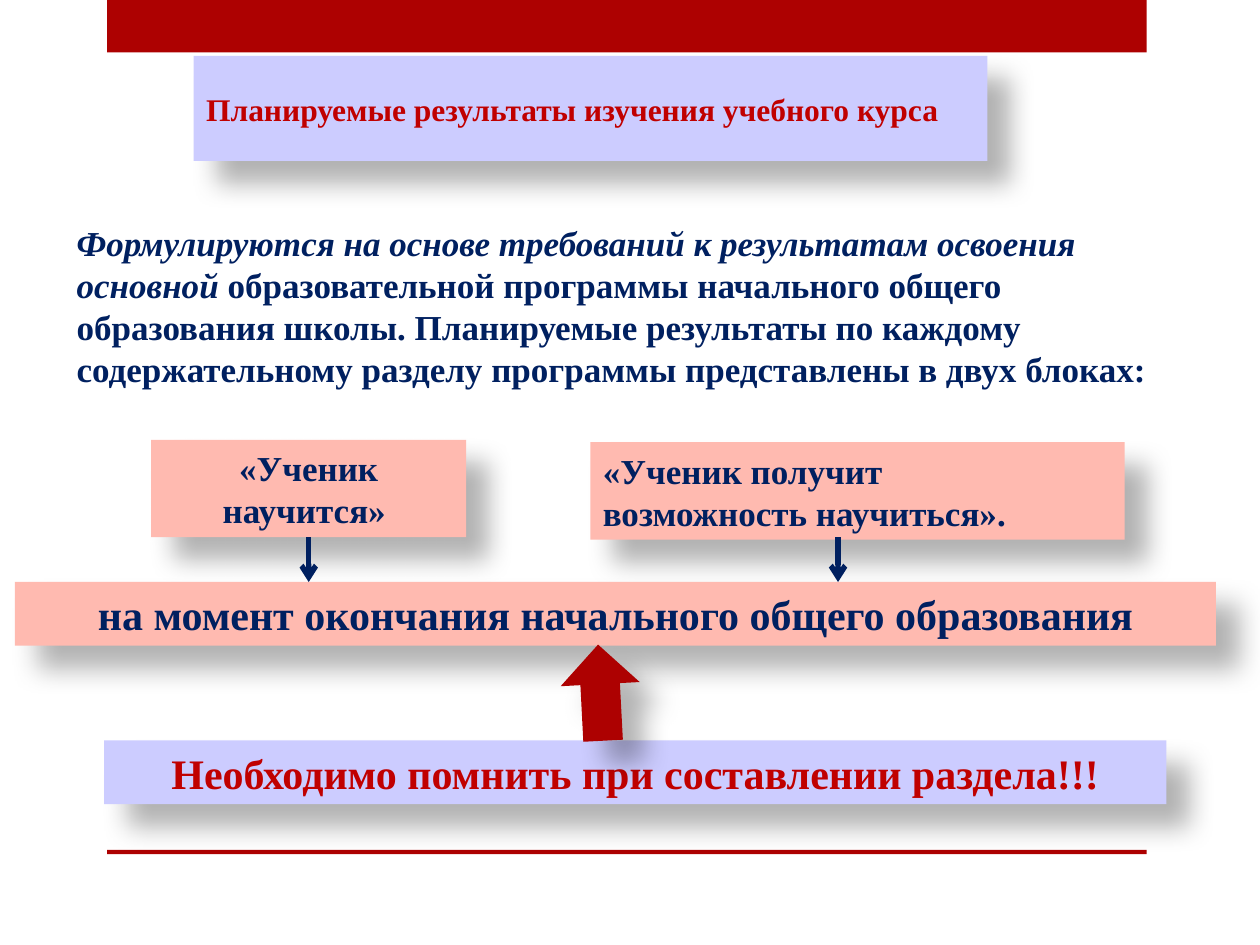
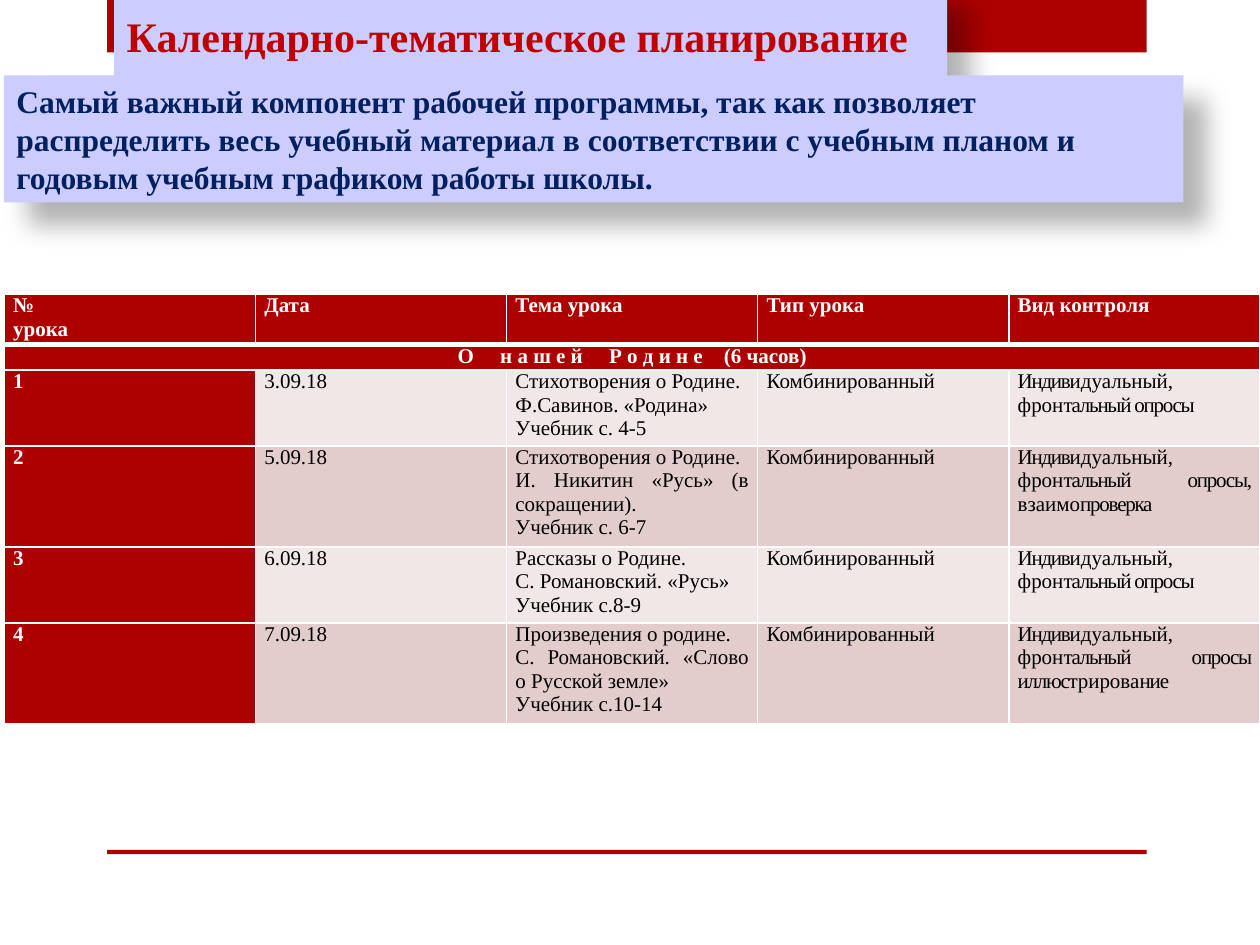
from lxml.etree import SubElement
from pptx import Presentation
from pptx.dml.color import RGBColor
from pptx.enum.shapes import MSO_CONNECTOR, MSO_SHAPE
from pptx.enum.text import MSO_AUTO_SIZE, MSO_VERTICAL_ANCHOR, PP_ALIGN
from pptx.oxml import parse_xml
from pptx.oxml.ns import nsdecls, qn
from pptx.util import Pt

RED = RGBColor(0xAD, 0x01, 0x01)
TITLE_RED = RGBColor(0xC0, 0x00, 0x00)
NAVY = RGBColor(0x00, 0x20, 0x60)
LAVENDER = RGBColor(0xCC, 0xCC, 0xFF)
SALMON = RGBColor(0xFF, 0xBA, 0xB0)
LIGHT_ROW = RGBColor(0xF1, 0xE7, 0xE7)
DARK_ROW = RGBColor(0xE3, 0xCC, 0xCC)
WHITE = RGBColor(0xFF, 0xFF, 0xFF)
BLACK = RGBColor(0x00, 0x00, 0x00)
FONT = "Times New Roman"

BAND_LEFT, BAND_WIDTH = 61.2, 594
COLUMN_WIDTH = 143.5
ROW_HEIGHTS = [28.4, 14.6, 43.4, 57.4, 43.4, 57.4]
TIGHT = -0.7


def plain(*lines):
    """Paragraphs of one segment each, with normal letter spacing."""
    return [[(line, 0)] for line in lines]


def control(*ending):
    """The kind of lesson control, set partly in tight letters."""
    return [[("Индиви", TIGHT), ("дуальный, фрон", 0), *ending]]


HEADERS = [plain("№", "урока"), plain("Дата"), plain("Тема урока"),
           plain("Тип урока"), plain("Вид контроля")]
SECTION = [[("О", 0), (" ", 12), ("н а ш е й", 0), (" ", 12), ("Р о д и н е", 0),
            (" ", 9), ("(6 часов)", 0)]]
LESSONS = [
    ("3.09.18", plain("Стихотворения о Родине.", "Ф.Савинов. «Родина»", "Учебник с. 4-5"),
     control(("тальный опросы", TIGHT))),
    ("5.09.18", plain("Стихотворения о Родине.", "И. Никитин «Русь» (в сокращении).",
                      "Учебник с. 6-7"),
     control(("тальный опросы, ", TIGHT), ("взаимо", 0), ("проверка", TIGHT))),
    ("6.09.18", plain("Рассказы о Родине.", "С. Романовский. «Русь»", "Учебник с.8-9"),
     control(("тальный опросы", TIGHT))),
    ("7.09.18", plain("Произведения о родине.", "С. Романовский. «Слово о Русской земле»",
                      "Учебник с.10-14"),
     control(("тальный опросы иллюст", TIGHT), ("рирова", 0), ("ние", -0.6))),
]


def points(*lengths):
    return [Pt(length) for length in lengths]


def fill_plain(shape, color):
    shape.fill.solid()
    shape.fill.fore_color.rgb = color
    shape.line.fill.background()
    shape.shadow.inherit = False


def add_shadow(shape):
    effects = shape.element.spPr.find(qn("a:effectLst"))
    effects.append(parse_xml(
        f'<a:outerShdw {nsdecls("a")} blurRad="{Pt(15)}" dist="{Pt(18)}" dir="2700000" '
        'algn="tl" rotWithShape="0"><a:srgbClr val="000000"><a:alpha val="30000"/>'
        '</a:srgbClr></a:outerShdw>'))


def format_run(run, size, color, bold=True):
    run.font.name = FONT
    run.font.size = Pt(size)
    run.font.bold = bold
    run.font.color.rgb = color


def write_text(shape, text, size, color, align=PP_ALIGN.LEFT):
    frame = shape.text_frame
    frame.text = text
    frame.word_wrap = True
    frame.auto_size = MSO_AUTO_SIZE.SHAPE_TO_FIT_TEXT
    frame.vertical_anchor = MSO_VERTICAL_ANCHOR.MIDDLE
    for paragraph in frame.paragraphs:
        paragraph.alignment = align
        for run in paragraph.runs:
            format_run(run, size, color)


def add_bands_to_master(presentation, slide):
    """Draw the top band and bottom rule, then move them behind the master's parts."""
    master_tree = presentation.slide_master.shapes.element
    for position, (top, height) in enumerate([(0, 30), (485.7, 2.5)]):
        band = slide.shapes.add_shape(
            MSO_SHAPE.RECTANGLE, *points(BAND_LEFT, top, BAND_WIDTH, height))
        fill_plain(band, RED)
        master_tree.insert(2 + position, band.element)


def place_title(slide, text, box, size):
    title = slide.shapes.title
    title.left, title.top, title.width, title.height = points(*box)
    fill_plain(title, LAVENDER)
    add_shadow(title)
    write_text(title, text, size, TITLE_RED)


def add_panel(slide, text, box, fill, size, color=NAVY, align=PP_ALIGN.CENTER):
    panel = slide.shapes.add_shape(MSO_SHAPE.RECTANGLE, *points(*box))
    fill_plain(panel, fill)
    add_shadow(panel)
    write_text(panel, text, size, color, align)
    return panel


def add_introduction(slide, box):
    text_box = slide.shapes.add_textbox(*points(*box))
    write_text(text_box, "Формулируются на основе требований к результатам освоения основной ",
               20, NAVY)
    paragraph = text_box.text_frame.paragraphs[0]
    paragraph.runs[0].font.italic = True
    run = paragraph.add_run()
    run.text = ("образовательной программы начального общего образования школы. "
                "Планируемые результаты по каждому содержательному разделу программы "
                "представлены в двух блоках:")
    format_run(run, 20, NAVY)


def add_down_arrow(slide, x, top, bottom):
    arrow = slide.shapes.add_connector(MSO_CONNECTOR.STRAIGHT, *points(x, top, x, bottom))
    arrow.line.color.rgb = NAVY
    arrow.line.width = Pt(3)
    properties = arrow.element.spPr
    SubElement(properties.find(qn("a:ln")), qn("a:tailEnd"), type="arrow")
    SubElement(properties, qn("a:effectLst"))
    return arrow


def add_block_arrow(slide, box):
    arrow = slide.shapes.add_shape(MSO_SHAPE.RIGHT_ARROW, *points(*box))
    arrow.rotation = 267
    fill_plain(arrow, RED)
    add_shadow(arrow)


def build_results_slide(slide):
    place_title(slide, "Планируемые результаты изучения учебного курса",
                (110.6, 47.4, 453.6, 29.1), 18)
    add_introduction(slide, (36.7, 122.4, 640.8, 104.4))
    will_learn = add_panel(slide, "«Ученик научится» ", (86.4, 251.3, 180, 55.7), SALMON, 20)
    add_panel(slide, "«Ученик получит\nвозможность научиться».",
              (337.4, 252.7, 305.3, 55.7), SALMON, 20, align=PP_ALIGN.LEFT)
    add_panel(slide, "на момент окончания начального общего образования",
              (8.6, 332.6, 686.2, 36.4), SALMON, 24)
    arrow_top, arrow_bottom = 307, 332.6
    add_down_arrow(slide, 176.4, arrow_top, arrow_bottom).begin_connect(will_learn, 2)
    add_down_arrow(slide, 478.9, arrow_top, arrow_bottom)
    add_panel(slide, "Необходимо помнить при составлении раздела!!!",
              (59.5, 423.1, 607, 36.4), LAVENDER, 24, TITLE_RED)
    add_block_arrow(slide, (315.7, 373.2, 55, 45.2))


def set_borders(cell, top=1, bottom=1):
    properties = cell._tc.get_or_add_tcPr()
    widths = {"lnL": 1, "lnR": 1, "lnT": top, "lnB": bottom}
    for position, (side, width) in enumerate(widths.items()):
        properties.insert(position, parse_xml(
            f'<a:{side} {nsdecls("a")} w="{Pt(width)}"><a:solidFill>'
            f'<a:srgbClr val="{WHITE}"/></a:solidFill></a:{side}>'))


def write_cell(cell, paragraphs, fill, align=PP_ALIGN.JUSTIFY):
    """Write segments of (text, letter spacing); red cells get bold white text."""
    strong = fill == RED
    cell.fill.solid()
    cell.fill.fore_color.rgb = fill
    cell.margin_left = cell.margin_right = Pt(5.1)
    cell.margin_top = cell.margin_bottom = 0
    frame = cell.text_frame
    for number, segments in enumerate(paragraphs):
        paragraph = frame.add_paragraph() if number else frame.paragraphs[0]
        paragraph.alignment = align
        for text, spacing in segments:
            run = paragraph.add_run()
            run.text = text
            format_run(run, 12, WHITE if strong else BLACK, strong)
            if spacing:
                run._r.get_or_add_rPr().set("spc", str(round(spacing * 100)))


def add_lesson_table(slide, left, top):
    column_count = len(HEADERS)
    table = slide.shapes.add_table(
        len(ROW_HEIGHTS), column_count,
        *points(left, top, COLUMN_WIDTH * column_count, sum(ROW_HEIGHTS))).table
    table.horz_banding = False
    for column in table.columns:
        column.width = Pt(COLUMN_WIDTH)
    for row, height in zip(table.rows, ROW_HEIGHTS):
        row.height = Pt(height)

    for column, header in enumerate(HEADERS):
        write_cell(table.cell(0, column), header, RED)
    table.cell(1, 0).merge(table.cell(1, column_count - 1))
    write_cell(table.cell(1, 0), SECTION, RED, PP_ALIGN.CENTER)
    for number, (date, topic, check) in enumerate(LESSONS, start=1):
        row_fill = LIGHT_ROW if number % 2 else DARK_ROW
        contents = [plain(str(number)), plain(date), topic, plain("Комбинированный"), check]
        for column, paragraphs in enumerate(contents):
            write_cell(table.cell(number + 1, column), paragraphs,
                       row_fill if column else RED)

    for number, row in enumerate(table.rows):
        for cell in row.cells:
            set_borders(cell, top=3 if number == 1 else 1, bottom=3 if number == 0 else 1)


def build_planning_slide(slide):
    place_title(slide, "Календарно-тематическое планирование", (65.2, 2.2, 476, 36.4), 24)
    add_panel(slide, "Самый важный компонент рабочей программы, так как позволяет "
              "распределить весь учебный материал в соответствии с учебным планом и "
              "годовым учебным графиком работы школы.",
              (2.3, 43, 673.9, 72.7), LAVENDER, 18, align=PP_ALIGN.LEFT)
    add_lesson_table(slide, 2.5, 168)


def main():
    presentation = Presentation()
    presentation.slide_width, presentation.slide_height = points(720, 540)
    title_only = presentation.slide_layouts[5]
    results_slide = presentation.slides.add_slide(title_only)
    add_bands_to_master(presentation, results_slide)
    build_results_slide(results_slide)
    build_planning_slide(presentation.slides.add_slide(title_only))
    presentation.save("out.pptx")


if __name__ == "__main__":
    main()
